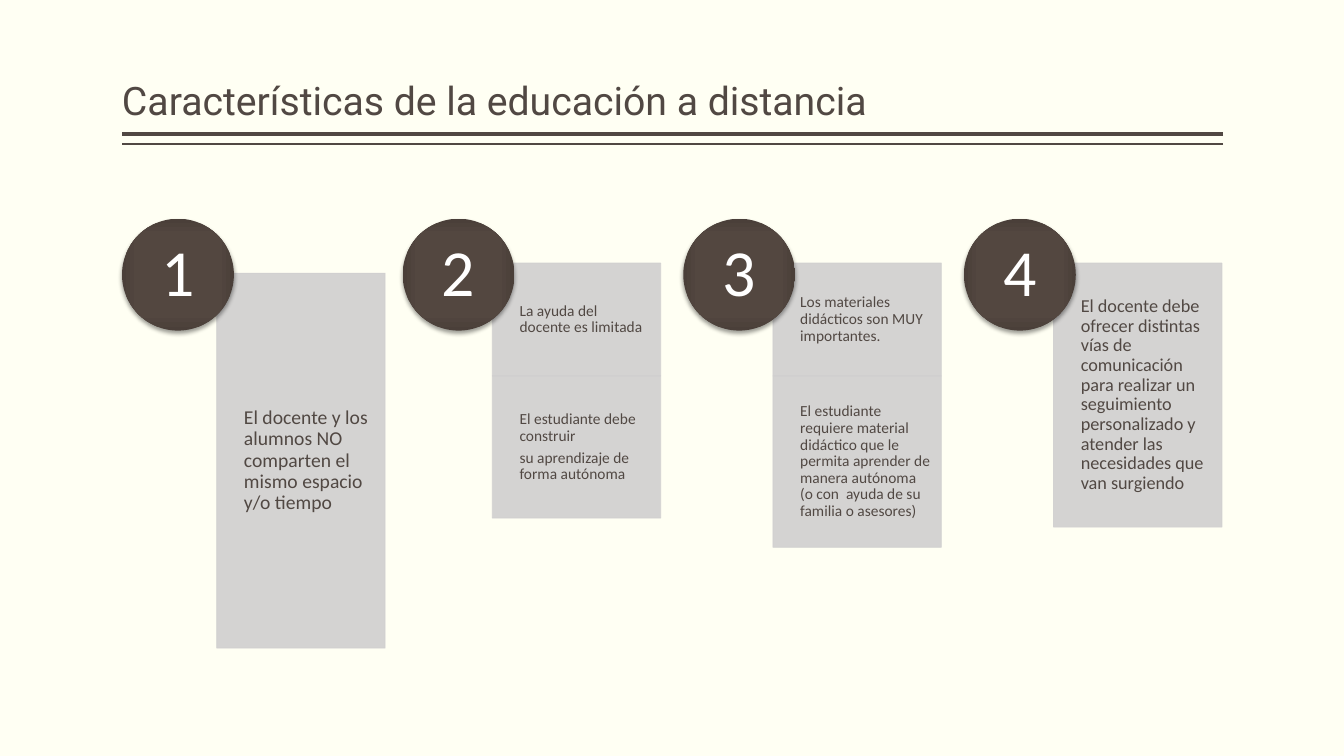
"""Build the slide on the traits of distance learning."""
from dataclasses import dataclass

import lxml.etree
import pptx
import pptx.dml.color
import pptx.enum.shapes
import pptx.enum.text
import pptx.oxml
import pptx.oxml.ns
import pptx.util

Inches = pptx.util.Inches
Pt = pptx.util.Pt
Anchor = pptx.enum.text.MSO_ANCHOR
Align = pptx.enum.text.PP_ALIGN
Kind = pptx.enum.shapes.MSO_SHAPE


@dataclass(frozen=True)
class Theme:
    """Colours, fonts and type sizes."""
    paper: str = "FFFFF3"
    ink: str = "514843"
    card: str = "D0CFCF"
    white: str = "FFFFFF"
    disc: tuple = ((0, "544740"), (71, "534740"), (100, "4A3F39"))
    head: str = "Roboto"
    body: str = "Calibri"
    title: float = 28
    digit: float = 47
    large: float = 14
    mid: float = 13
    small: float = 11


@dataclass(frozen=True)
class Card:
    """One grey box: its text, height, type size and inset."""
    text: str
    height: float
    size: float
    inset: float


@dataclass(frozen=True)
class Column:
    """A numbered stack of cards."""
    shift: float
    top: float
    cards: tuple


THEME = Theme()
LEFT, RIGHT = 1.21, 12.13
DISC, DISC_TOP = 1.11, 2.17
WIDTH, INDENT = 1.67, 0.27
PITCH = (9.56 - LEFT) / 3

COLUMNS = (
    Column(0.94, 2.71, (
        Card("El docente y los alumnos NO comparten el mismo espacio y/o tiempo",
             3.72, THEME.large, 0.11),)),
    Column(0.89, 2.61, (
        Card("La ayuda del docente es limitada", 1.12, THEME.small, 0.09),
        Card("El estudiante debe construir\nsu aprendizaje de forma autónoma",
             1.41, THEME.small, 0.09))),
    Column(0.89, 2.61, (
        Card("Los materiales didácticos son MUY importantes.",
             1.12, THEME.small, 0.09),
        Card("El estudiante requiere material didáctico que le permita aprender "
             "de manera autónoma (o con  ayuda de su familia o asesores)",
             1.7, THEME.small, 0.09))),
    Column(0.89, 2.61, (
        Card("El docente debe ofrecer distintas vías de comunicación para "
             "realizar un seguimiento personalizado y atender las necesidades "
             "que van surgiendo", 2.62, THEME.mid, 0.1),)),
)


def rgb(code: str) -> pptx.dml.color.RGBColor:
    """Turn a hex code into a colour."""
    return pptx.dml.color.RGBColor.from_string(code)


def write(shape, text: str, size: float, font: str, tint: str, insets: tuple,
          align=Align.LEFT, anchor=Anchor.MIDDLE, after: float = 0) -> None:
    """Fill a shape with formatted text; insets run left, top, right, bottom."""
    frame = shape.text_frame
    frame.text = text
    frame.word_wrap = True
    frame.auto_size = pptx.enum.text.MSO_AUTO_SIZE.NONE
    frame.vertical_anchor = anchor
    (frame.margin_left, frame.margin_top,
     frame.margin_right, frame.margin_bottom) = map(Inches, insets)
    for para in frame.paragraphs:
        para.alignment = align
        para.line_spacing = 0.9
        para.space_before = Pt(0)
        para.space_after = Pt(after)
        for run in para.runs:
            run.font.size = Pt(size)
            run.font.name = font
            run.font.color.rgb = rgb(tint)


def add_rule(slide, top: float, weight: float) -> None:
    """Draw one line under the title."""
    rule = slide.shapes.add_connector(
        pptx.enum.shapes.MSO_CONNECTOR.STRAIGHT,
        Inches(RIGHT), Inches(top), Inches(LEFT), Inches(top))
    rule.line.color.rgb = rgb(THEME.ink)
    rule.line.width = Pt(weight)
    lxml.etree.SubElement(rule._element.spPr, pptx.oxml.ns.qn("a:effectLst"))


def add_card(slide, card: Card, left: float, top: float) -> None:
    """Draw one card with its text."""
    box = slide.shapes.add_shape(Kind.RECTANGLE, Inches(left), Inches(top),
                                 Inches(WIDTH), Inches(card.height))
    box.shadow.inherit = False
    box.fill.solid()
    box.fill.fore_color.rgb = rgb(THEME.card)
    box.line.color.rgb = rgb(THEME.card)
    box.line.width = Pt(0.5)
    for tone in box._element.spPr.iter(pptx.oxml.ns.qn("a:srgbClr")):
        lxml.etree.SubElement(tone, pptx.oxml.ns.qn("a:alpha"), val="90000")
    write(box, card.text, card.size, THEME.body, THEME.ink,
          (INDENT, card.inset, card.inset, card.inset), after=0.35 * card.size)


def add_disc(slide, digit: int, left: float) -> None:
    """Draw a numbered disc with a soft shadow."""
    disc = slide.shapes.add_shape(Kind.OVAL, Inches(left), Inches(DISC_TOP),
                                  Inches(DISC), Inches(DISC))
    disc.line.fill.background()
    disc.shadow.inherit = False
    space = pptx.oxml.ns.nsdecls("a")
    stops = "".join(f'<a:gs pos="{pos * 1000}"><a:srgbClr val="{tint}"/></a:gs>'
                    for pos, tint in THEME.disc)
    props = disc._element.spPr
    props.find(pptx.oxml.ns.qn("a:prstGeom")).addnext(pptx.oxml.parse_xml(
        f'<a:gradFill {space} rotWithShape="1"><a:gsLst>{stops}</a:gsLst>'
        '<a:path path="rect"><a:fillToRect l="50000" t="50000" r="50000" '
        'b="50000"/></a:path></a:gradFill>'))
    props.find(pptx.oxml.ns.qn("a:effectLst")).append(pptx.oxml.parse_xml(
        f'<a:outerShdw {space} blurRad="{Pt(3.1)}" dist="{Pt(2)}" dir="5400000" '
        'rotWithShape="0"><a:srgbClr val="000000"><a:alpha val="38000"/>'
        '</a:srgbClr></a:outerShdw>'))
    write(disc, str(digit), THEME.digit, THEME.body, THEME.white,
          (0, 0, 0, 0), align=Align.CENTER)


def add_column(slide, index: int, column: Column) -> None:
    """Draw a stack of cards and the disc on its corner."""
    left = LEFT + index * PITCH
    top = column.top
    for card in column.cards:
        add_card(slide, card, left + column.shift, top)
        top += card.height
    add_disc(slide, index + 1, left)


def main() -> None:
    """Build and save the deck."""
    deck = pptx.Presentation()
    deck.slide_width, deck.slide_height = Inches(13.33), Inches(7.5)
    slide = deck.slides.add_slide(deck.slide_layouts.get_by_name("Title Only"))
    slide.background.fill.solid()
    slide.background.fill.fore_color.rgb = rgb(THEME.paper)
    title = slide.shapes.title
    title.left, title.top = Inches(LEFT), Inches(0.08)
    title.width, title.height = Inches(RIGHT - LEFT), Inches(1.2)
    write(title, "Características de la educación a distancia", THEME.title,
          THEME.head, THEME.ink, (0, 0.05, 0, 0.05), anchor=Anchor.BOTTOM)
    add_rule(slide, 1.33, 3)
    add_rule(slide, 1.43, 1)
    for index, column in enumerate(COLUMNS):
        add_column(slide, index, column)
    deck.save("out.pptx")


if __name__ == "__main__":
    main()
